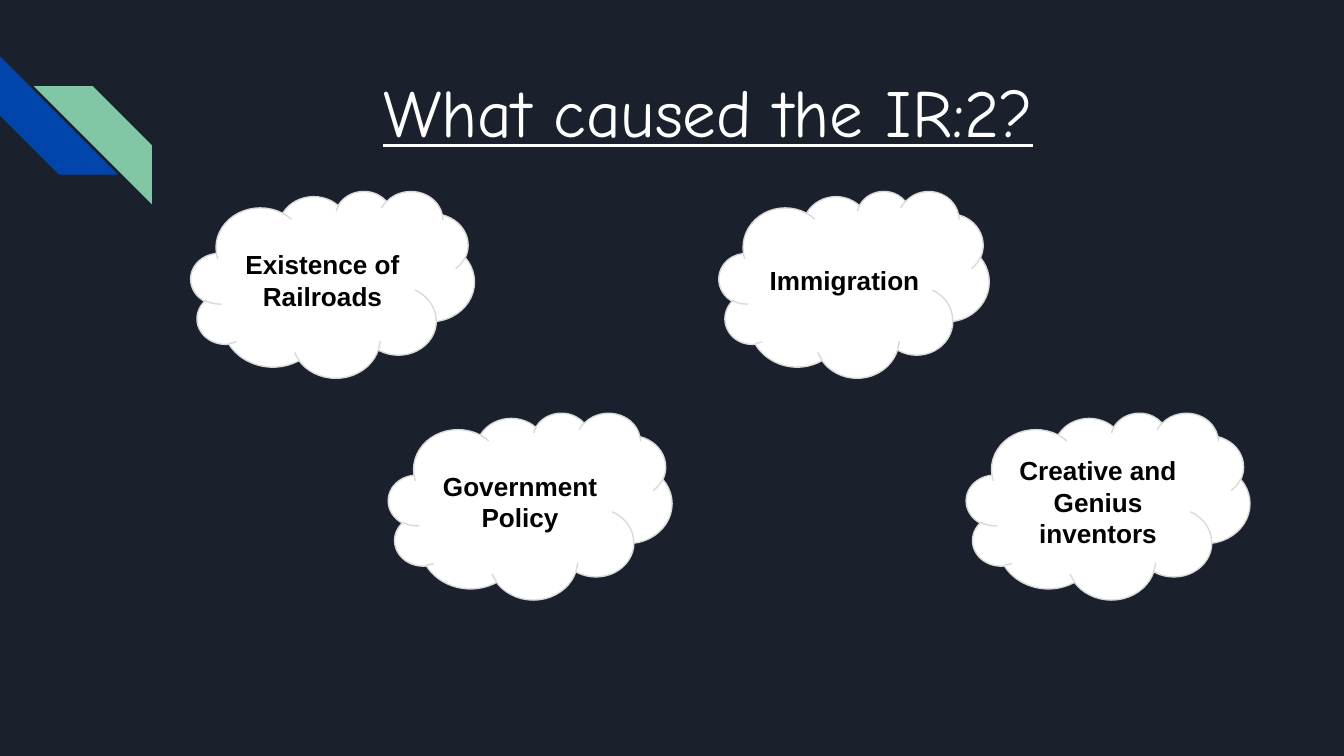
from pptx import Presentation
from pptx.dml.color import RGBColor as Rgb
from pptx.enum.shapes import MSO_SHAPE as Kind
from pptx.enum.text import MSO_ANCHOR as Anchor, PP_ALIGN as Align
from pptx.util import Inches as In, Pt

# Content: heading, then clouds as (words, row, left, width)
TITLE = "What caused the IR:2?"
CLOUDS = [
    ("Existence of Railroads", 0, 1.42, 2.11),
    ("Immigration", 0, 5.35, 2.01),
    ("Government Policy", 1, 2.89, 2.11),
    ("Creative and Genius inventors", 1, 7.19, 2.11),
]
# Stripes: colour, left, top, turn, mirrored
STRIPES = [("blue", 0, 0.42, 270, False), ("green", 0.25, 0.64, 0, True)]

THEME = {
    "back": "1B212C", "blue": "0145AC", "green": "82C7A5",
    "white": "FFFFFF", "edge": "D9D9D9", "ink": "000000",
    "head": ("Comic Neue", 36), "body": ("Arial", 14),
}
WIDE = 10
HIGH = WIDE * 9 / 16
TOP, STEP, TALL = 1.42, 1.65, 1.39  # cloud rows
SIDE = 0.88  # stripe size
PAD = 0.1


def tint(name):
    return Rgb.from_string(THEME[name])


def add_part(kind, x, y, w, h, fill, line=None):
    part = slide.shapes.add_shape(kind, In(x), In(y), In(w), In(h))
    part.shadow.inherit = False
    part.fill.solid()
    part.fill.fore_color.rgb = tint(fill)
    if line:
        part.line.color.rgb = tint(line)
        part.line.width = Pt(0.75)
    else:
        part.line.fill.background()
    return part


def add_words(part, words, style, color, anchor, bold=False, under=False):
    frame = part.text_frame
    frame.word_wrap = True
    frame.vertical_anchor = anchor
    frame.margin_left = frame.margin_right = In(PAD)
    frame.margin_top = frame.margin_bottom = In(PAD)
    para = frame.paragraphs[0]
    para.alignment = Align.CENTER
    run = para.add_run()
    run.text = words
    font = run.font
    font.name, size = THEME[style]
    font.size = Pt(size)
    font.color.rgb = tint(color)
    font.bold, font.underline = bold, under


deck = Presentation()
deck.slide_width, deck.slide_height = In(WIDE), In(HIGH)
slide = deck.slides.add_slide(deck.slide_layouts[6])
slide.background.fill.solid()
slide.background.fill.fore_color.rgb = tint("back")

# Corner stripes
for color, x, y, turn, flip in STRIPES:
    stripe = add_part(Kind.DIAGONAL_STRIPE, x, y, SIDE, SIDE, color)
    stripe.adjustments[0] = 0.5
    stripe.rotation = turn
    if flip:
        stripe.element.spPr.xfrm.set("flipH", "1")

# Heading
head = slide.shapes.add_textbox(In(1.42), In(0.42), In(7.7), In(1))
add_words(head, TITLE, "head", "white", Anchor.TOP, under=True)

# Clouds, two staggered rows
for words, row, x, w in CLOUDS:
    cloud = add_part(Kind.CLOUD, x, TOP + row * STEP, w, TALL, "white", "edge")
    add_words(cloud, words, "body", "ink", Anchor.MIDDLE, bold=True)

deck.save("out.pptx")
